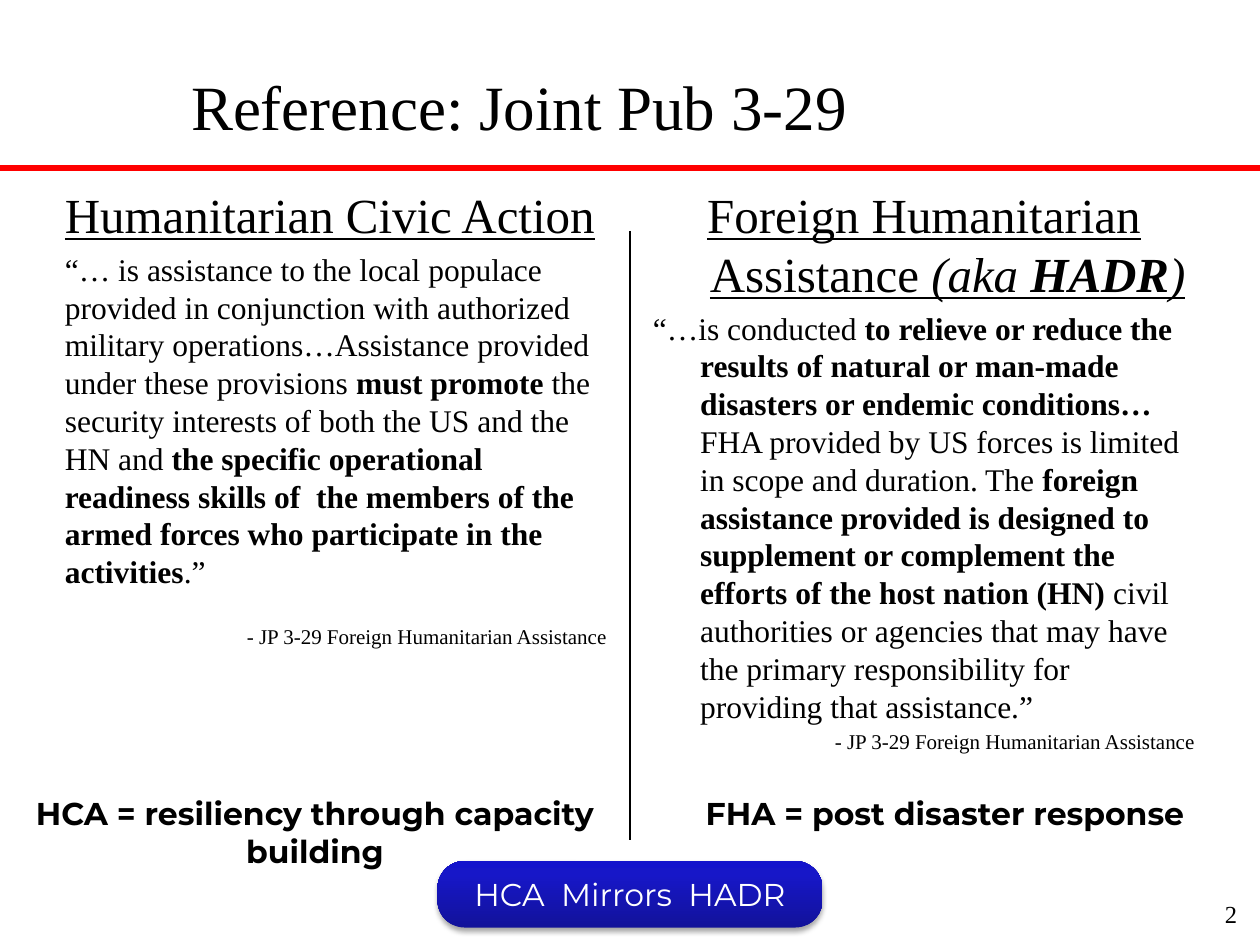
from copy import deepcopy
from dataclasses import dataclass

from lxml.etree import SubElement
from pptx import Presentation
from pptx.dml.color import RGBColor
from pptx.enum.shapes import MSO_CONNECTOR, MSO_SHAPE
from pptx.enum.text import MSO_ANCHOR, MSO_AUTO_SIZE, PP_ALIGN
from pptx.oxml import parse_xml
from pptx.oxml.ns import qn
from pptx.util import Pt


@dataclass(frozen=True)
class Theme:
    serif: str = "Times New Roman"
    sans: str = "Montserrat"
    black: str = "000000"
    white: str = "FFFFFF"
    red: str = "FF0000"
    pill_stops: tuple = ((0, "12129A"), (0.8, "1717C8"), (1, "1414CC"))
    title: int = 36
    heading: int = 28
    body: int = 18
    number: int = 14
    source: int = 12


THEME = Theme()
SOURCE = "- JP 3-29 Foreign Humanitarian Assistance"
HANGING = 27

HCA_HEADING = [("Humanitarian Civic Action", "u")]
HCA_QUOTE = [
    ("“… is assistance to the local populace provided in conjunction with authorized "
     "military operations…Assistance provided under these provisions ", ""),
    ("must promote ", "b"),
    ("the security interests of both the US and the HN and ", ""),
    ("the specific operational readiness skills of  the members of the armed forces "
     "who participate in the activities", "b"),
    (".”", ""),
]
FHA_HEADING = [("Foreign Humanitarian Assistance ", "u"), ("(aka ", "ui"),
               ("HADR", "uib"), (")", "ui")]
FHA_QUOTE = [
    ("“…is conducted ", ""),
    ("to relieve or reduce the results of natural or man-made disasters "
     "or endemic conditions…", "b"),
    ("FHA provided by US forces is limited in scope and duration. The", ""),
    (" foreign assistance provided is designed to supplement or complement the "
     "efforts of the host nation (HN)", "b"),
    (" civil authorities or agencies that may have the primary responsibility for "
     "providing that assistance.”", ""),
]


def style_font(font, size, name=THEME.serif, color=THEME.black):
    font.size = Pt(size)
    font.name = name
    font.color.rgb = RGBColor.from_string(color)


def add_runs(p, runs, size):
    """Add (text, style) runs; the style letters are b, i and u."""
    for text, style in runs:
        r = p.add_run()
        r.text = text
        style_font(r.font, size)
        r.font.bold = "b" in style
        r.font.italic = "i" in style
        r.font.underline = "u" in style


def add_box(slide, left, top, width, height):
    tf = slide.shapes.add_textbox(Pt(left), Pt(top), Pt(width), Pt(height)).text_frame
    tf.word_wrap = True
    return tf


def add_label(slide, text, box, size, align, name=THEME.serif, bold=False):
    p = add_box(slide, *box).paragraphs[0]
    p.text = text
    p.alignment = align
    style_font(p.runs[0].font, size, name)
    p.runs[0].font.bold = bold


def add_column(slide, box, heading, quote, heading_align, source_gap, indent=0):
    tf = add_box(slide, *box)
    rows = [
        (heading, THEME.heading, heading_align, 0),
        (quote, THEME.body, PP_ALIGN.LEFT, 3.6),
        ([(SOURCE, "")], THEME.source, PP_ALIGN.RIGHT, source_gap),
    ]
    for i, (runs, size, align, gap) in enumerate(rows):
        p = tf.add_paragraph() if i else tf.paragraphs[0]
        p.alignment = align
        p.space_before = Pt(gap)
        if indent:
            pPr = p._p.get_or_add_pPr()
            pPr.set("marL", str(Pt(indent)))
            pPr.set("indent", str(-Pt(indent)))
        add_runs(p, runs, size)


def add_line(slide, start, end, color, width):
    line = slide.shapes.add_connector(
        MSO_CONNECTOR.STRAIGHT, *(Pt(v) for v in (*start, *end)))
    line.line.color.rgb = RGBColor.from_string(color)
    line.line.width = Pt(width)
    SubElement(line._element.spPr, qn("a:effectLst"))


def set_title(slide, text):
    sp = slide.shapes.title
    sp.left, sp.top, sp.width, sp.height = Pt(102), Pt(30), Pt(606), Pt(60)
    tf = sp.text_frame
    tf.text = text
    tf.auto_size = MSO_AUTO_SIZE.NONE
    tf.vertical_anchor = MSO_ANCHOR.MIDDLE
    tf.paragraphs[0].alignment = PP_ALIGN.LEFT
    style_font(tf.paragraphs[0].runs[0].font, THEME.title)


def fill_gradient(fill, stops, angle):
    fill.gradient()
    fill.gradient_angle = angle
    gs_list = fill.gradient_stops[0]._gs.getparent()
    gs_list.append(deepcopy(gs_list[0]))
    for stop, (position, color) in zip(fill.gradient_stops, stops):
        stop.position = position
        stop.color.rgb = RGBColor.from_string(color)


def add_pill(slide, text):
    sp = slide.shapes.add_shape(
        MSO_SHAPE.ROUNDED_RECTANGLE, Pt(250), Pt(492), Pt(220), Pt(38))
    sp.adjustments[0] = 0.41
    sp.line.fill.background()
    fill_gradient(sp.fill, THEME.pill_stops, 90)
    sp._element.spPr.append(parse_xml(
        '<a:effectLst xmlns:a="http://schemas.openxmlformats.org/drawingml/2006/main">'
        f'<a:outerShdw blurRad="{Pt(3.1)}" dist="{Pt(1.8)}" dir="5400000" rotWithShape="0">'
        f'<a:srgbClr val="{THEME.black}"><a:alpha val="35000"/></a:srgbClr>'
        '</a:outerShdw></a:effectLst>'))
    tf = sp.text_frame
    tf.text = text
    tf.word_wrap = False
    tf.vertical_anchor = MSO_ANCHOR.MIDDLE
    tf.paragraphs[0].alignment = PP_ALIGN.CENTER
    style_font(tf.paragraphs[0].runs[0].font, THEME.body, THEME.sans, THEME.white)


def main():
    prs = Presentation()
    prs.slide_width, prs.slide_height = Pt(720), Pt(540)
    s = prs.slides.add_slide(prs.slide_layouts[5])

    add_line(s, (0, 96), (720, 96), THEME.red, 3)
    set_title(s, "Reference: Joint Pub 3-29")
    add_column(s, (30, 102, 324, 294), HCA_HEADING, HCA_QUOTE, PP_ALIGN.LEFT, 19)
    add_column(s, (366, 102, 324, 366), FHA_HEADING, FHA_QUOTE, PP_ALIGN.CENTER, 2.4,
               HANGING)
    add_label(s, "2", (564, 510, 150, 24), THEME.number, PP_ALIGN.RIGHT)
    summaries = ("HCA = resiliency through capacity building",
                 "FHA = post disaster response")
    for i, text in enumerate(summaries):
        add_label(s, text, (360 * i, 450, 360, 51 - 22 * i), THEME.body,
                  PP_ALIGN.CENTER, THEME.sans, True)
    add_line(s, (360, 132), (360, 480), THEME.black, 0.75)
    add_pill(s, "HCA  Mirrors  HADR")

    prs.save("out.pptx")


if __name__ == "__main__":
    main()
